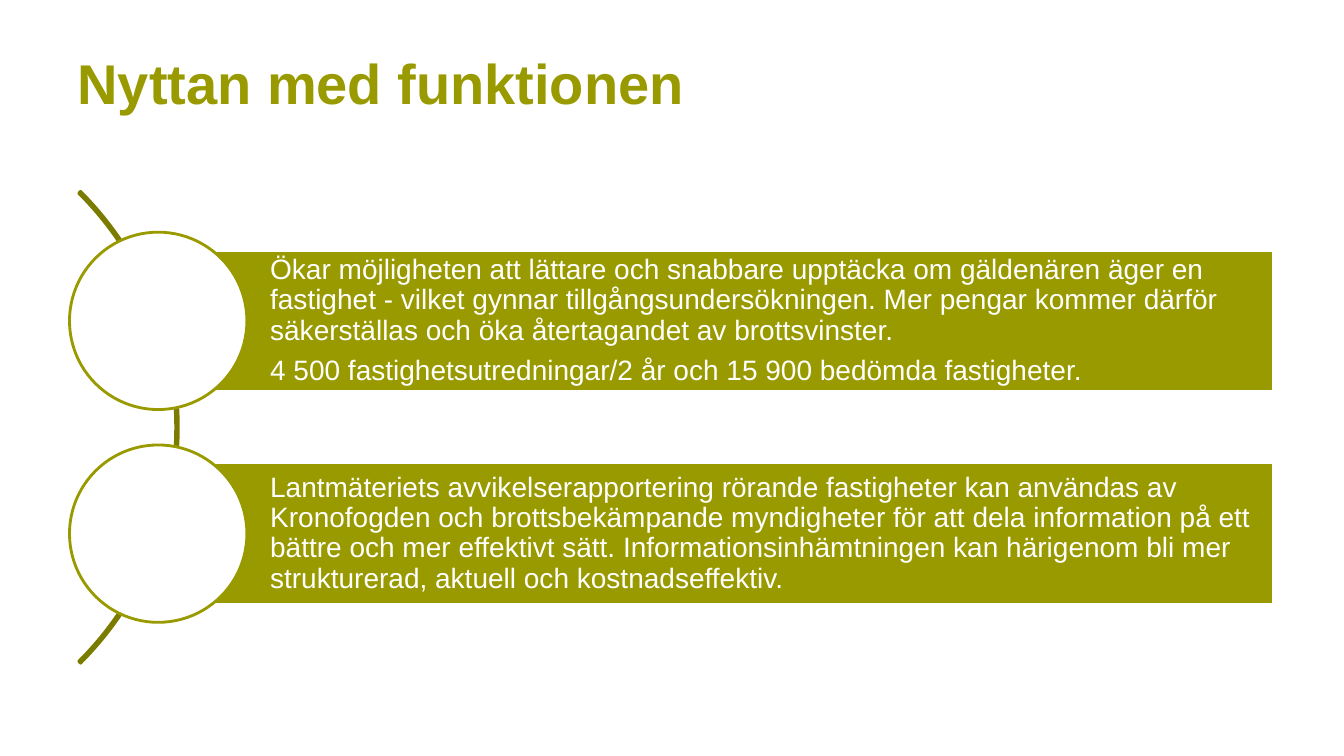
from pptx import Presentation
from pptx.dml.color import RGBColor
from pptx.enum.shapes import MSO_SHAPE
from pptx.enum.text import MSO_ANCHOR, PP_ALIGN
from pptx.util import Pt

# Content
TITLE = "Nyttan med funktionen"
ITEMS = [
    [
        "Ökar möjligheten att lättare och snabbare upptäcka om gäldenären "
        "äger en fastighet - vilket gynnar tillgångsundersökningen. Mer "
        "pengar kommer därför säkerställas och öka återtagandet av "
        "brottsvinster.",
        "4 500 fastighetsutredningar/2 år och 15 900 bedömda fastigheter.",
    ],
    [
        "Lantmäteriets avvikelserapportering rörande fastigheter kan "
        "användas av Kronofogden och brottsbekämpande myndigheter för att "
        "dela information på ett bättre och mer effektivt sätt. "
        "Informationsinhämtningen kan härigenom bli mer strukturerad, "
        "aktuell och kostnadseffektiv.",
    ],
]

# Style
OLIVE = RGBColor(0x99, 0x99, 0x00)
DARK = RGBColor(0x7B, 0x7B, 0x00)
WHITE = RGBColor(0xFF, 0xFF, 0xFF)
FONT = "Arial"
ARC, RECT, OVAL = MSO_SHAPE.BLOCK_ARC, MSO_SHAPE.RECTANGLE, MSO_SHAPE.OVAL
MIDDLE, LEFT = MSO_ANCHOR.MIDDLE, PP_ALIGN.LEFT

# Layout, in points
BAR_X, BAR_W, BAR_H = 113, 796.3, 100.8
DISC = 126.7
FIRST, PITCH = 229.2, 152
ARC_X, ARC_D = -349.2, 476.6


def add_part(slide, kind, x, mid, w, h, fill, edge):
    """Add a shape whose vertical centre lies at mid."""
    part = slide.shapes.add_shape(kind, Pt(x), Pt(mid - h / 2), Pt(w), Pt(h))
    part.shadow.inherit = False
    if fill is None:
        part.fill.background()
    else:
        part.fill.solid()
        part.fill.fore_color.rgb = fill
    part.line.color.rgb = edge
    part.line.width = Pt(2)
    return part


def set_font(para, size, color, bold=False):
    para.alignment = LEFT
    for run in para.runs:
        run.font.name = FONT
        run.font.size = Pt(size)
        run.font.bold = bold
        run.font.color.rgb = color


def fill_text(bar, lines):
    frame = bar.text_frame
    frame.word_wrap = True
    frame.vertical_anchor = MIDDLE
    frame.margin_left = Pt(80)
    frame.margin_right = frame.margin_top = frame.margin_bottom = Pt(4.5)
    frame.text = "\n".join(lines)
    for para in frame.paragraphs:
        para.line_spacing = 0.9
        para.space_after = Pt(7)
        set_font(para, 20, WHITE)


def main():
    prs = Presentation()
    prs.slide_width, prs.slide_height = Pt(960), Pt(540)
    slide = prs.slides.add_slide(prs.slide_layouts[5])

    # Title
    title = slide.shapes.title
    title.left, title.top = Pt(48.2), Pt(21.6)
    title.width, title.height = Pt(862.6), Pt(73.4)
    title.text_frame.text = TITLE
    title.text_frame.vertical_anchor = MIDDLE
    set_font(title.text_frame.paragraphs[0], 40, OLIVE, True)

    # Arc centred on the rows, from 315 to 45 degrees
    mid = FIRST + PITCH * (len(ITEMS) - 1) / 2
    arc = add_part(slide, ARC, ARC_X, mid, ARC_D, ARC_D, None, DARK)
    for i, value in enumerate((189, 27, 0.004)):
        arc.adjustments[i] = value

    # One bar and one disc for each item
    for i, lines in enumerate(ITEMS):
        row = FIRST + i * PITCH
        bar = add_part(slide, RECT, BAR_X, row, BAR_W, BAR_H, OLIVE, WHITE)
        fill_text(bar, lines)
        add_part(slide, OVAL, BAR_X - DISC / 2, row, DISC, DISC, WHITE, OLIVE)

    prs.save("out.pptx")


if __name__ == "__main__":
    main()
